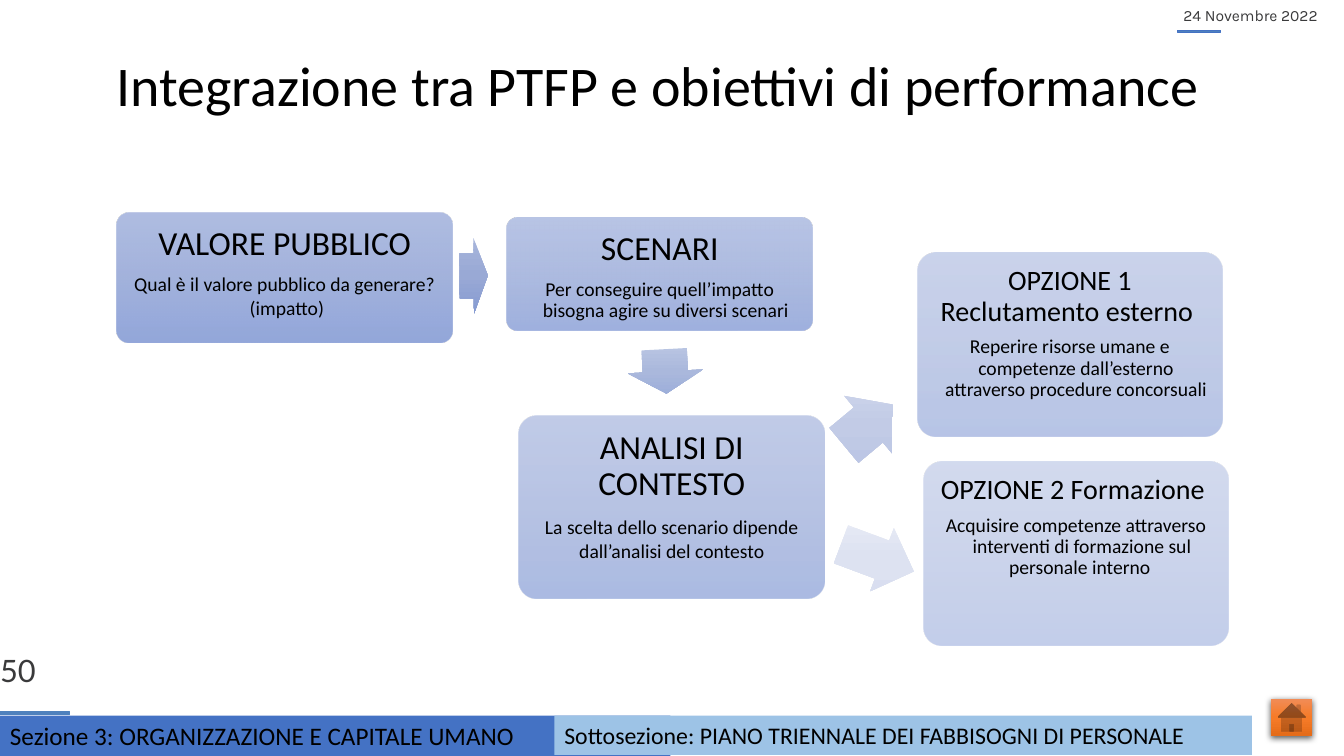
from lxml.etree import SubElement
from pptx import Presentation
from pptx.dml.color import RGBColor
from pptx.enum.shapes import MSO_SHAPE
from pptx.enum.text import MSO_ANCHOR, PP_ALIGN
from pptx.oxml.ns import qn
from pptx.util import Pt

COLORS = {
    "black": "000000", "grey": "3A3A3B", "section": "4472C4",
    "subsection": "9DC3E6", "rule": "4F81BD",
}
CARD_GRADIENT = ("A8B7DF", "9AABD9", "889ED7")
HOME_GRADIENT = ("F18C57", "F67B28", "E56C19")

TITLE = "Integrazione tra PTFP e obiettivi di performance"

# Cards: position, opacity, heading, heading size, body lines, body hangs
CARDS = [
    ((83.5, 151.9, 239.8, 92.9), 90, "VALORE PUBBLICO", 24,
     ["Qual è il valore pubblico da generare?", " (impatto)"], True),
    ((362.2, 155.5, 218.2, 80.6), 80, "SCENARI", 24,
     ["Per conseguire quell’impatto bisogna agire su diversi scenari"], True),
    ((370.8, 296.6, 218.2, 131), 70, "ANALISI DI CONTESTO", 24,
     ["La scelta dello scenario dipende dall’analisi del contesto"], False),
    ((655.2, 180.7, 218.2, 131), 60, "OPZIONE 1 Reclutamento esterno ", 20,
     ["Reperire risorse umane e competenze dall’esterno attraverso "
      "procedure concorsuali"], True),
    ((659.5, 329.8, 218.2, 131), 50, "OPZIONE 2 Formazione ", 20,
     ["Acquisire competenze attraverso interventi di formazione sul "
      "personale interno "], True),
]

# Arrows: position, rotation, gradient
ARROWS = [
    ((328.3, 169.9, 20.2, 54), 359.5, ("A7B5DB", "99A9D5", "869BD2")),
    ((459.4, 238.3, 31.7, 54), 87, ("B8C4E2", "AAB8DC", "9CAEDA")),
    ((597.6, 276.5, 45.4, 54), 320.2, ("CFD6EB", "C2CBE6", "B9C4E4")),
    ((599, 374.4, 55.4, 48.2), 20.5, ("E9ECF6", "DDE2F1", "D9DEF0")),
]

# Footer bars: position, colour, text, size
BARS = [
    ((0, 511.2, 478.8, 28.8), "section",
     "Sezione 3: ORGANIZZAZIONE E CAPITALE UMANO", 18),
    ((396, 511.2, 498.2, 28.1), "subsection",
     "Sottosezione: PIANO TRIENNALE DEI FABBISOGNI DI PERSONALE", 17),
]

# Date and page number: position, text, size, font, line spacing
LABELS = [
    ((845.3, 2.2, 114.5, 14.4), "24 Novembre 2022", 11.2, "Karla", 15.6),
    ((0, 468, 35.3, 24.5), "50", 22, "Lato", 24.2),
]
RULES = [
    ((841, 21.6, 31, 1.4), "section"),
    ((0, 508.3, 49.7, 2.2), "rule"),
]
HOME_BUTTON = (907.9, 499, 29.5, 26.6)

BODY_SIZE = 14
HANG = 8.64

deck = Presentation()
deck.slide_width, deck.slide_height = Pt(960), Pt(540)
page = deck.slides.add_slide(deck.slide_layouts[6])


def add_box(kind, place):
    box = page.shapes.add_shape(kind, *map(Pt, place))
    box.shadow.inherit = False
    box.line.fill.background()
    return box


def fill_solid(box, color):
    box.fill.solid()
    box.fill.fore_color.rgb = RGBColor.from_string(COLORS[color])


def fill_gradient(box, colors, opacity=100):
    box.fill.gradient()
    box.fill.gradient_angle = 270
    gradient = box.element.spPr.find(qn("a:gradFill"))
    gradient.set("rotWithShape", "0")
    stops = gradient.find(qn("a:gsLst"))
    for stop in list(stops):
        stops.remove(stop)
    for index, color in enumerate(colors):
        stop = SubElement(stops, qn("a:gs"), pos=str(index * 50000))
        tint = SubElement(stop, qn("a:srgbClr"), val=color)
        if opacity < 100:
            SubElement(tint, qn("a:alpha"), val=str(opacity * 1000))


def set_frame(box, across=7.2, down=3.6, anchor=MSO_ANCHOR.TOP):
    frame = box.text_frame
    frame.word_wrap = True
    frame.vertical_anchor = anchor
    frame.margin_left = frame.margin_right = Pt(across)
    frame.margin_top = frame.margin_bottom = Pt(down)
    return frame


def write(para, text, size, font="Calibri", color="black",
          align=PP_ALIGN.LEFT, spacing=None):
    para.alignment = align
    para.line_spacing = spacing
    span = para.add_run()
    span.text = text
    span.font.size = Pt(size)
    span.font.name = font
    span.font.color.rgb = RGBColor.from_string(COLORS[color])


# Cards, each with a heading and body lines
for place, opacity, heading, size, lines, hangs in CARDS:
    card = add_box(MSO_SHAPE.ROUNDED_RECTANGLE, place)
    card.adjustments[0] = 0.1
    fill_gradient(card, CARD_GRADIENT, opacity)
    frame = set_frame(card, size * 0.3, size * 0.3)
    para = frame.paragraphs[0]
    write(para, heading, size, align=PP_ALIGN.CENTER, spacing=0.9)
    para.space_after = Pt(size * 0.35)
    for line in lines:
        para = frame.add_paragraph()
        write(para, line, BODY_SIZE, align=PP_ALIGN.CENTER,
              spacing=0.9 if hangs else None)
        if hangs:
            para.level = 1
            para.space_after = Pt(BODY_SIZE * 0.15)
            settings = para._p.get_or_add_pPr()
            settings.set("marL", str(Pt(HANG)))
            settings.set("indent", str(-Pt(HANG)))

# Arrows between the cards
for place, rotation, colors in ARROWS:
    arrow = add_box(MSO_SHAPE.RIGHT_ARROW, place)
    arrow.adjustments[0], arrow.adjustments[1] = 0.6, 0.5
    arrow.rotation = rotation
    fill_gradient(arrow, colors)

# Title
title = page.shapes.add_textbox(Pt(76.3), Pt(10.8), Pt(828), Pt(104.4))
write(set_frame(title, anchor=MSO_ANCHOR.MIDDLE).paragraphs[0], TITLE, 40,
      spacing=0.9)

# Footer bars
for place, color, text, size in BARS:
    bar = add_box(MSO_SHAPE.RECTANGLE, place)
    fill_solid(bar, color)
    write(set_frame(bar).paragraphs[0], text, size)

# Home button with a soft shadow
home = add_box(MSO_SHAPE.ACTION_BUTTON_HOME, HOME_BUTTON)
fill_gradient(home, HOME_GRADIENT)
effects = home.element.spPr.find(qn("a:effectLst"))
shadow = SubElement(effects, qn("a:outerShdw"), blurRad=str(Pt(4.5)),
                    dist=str(Pt(1.5)), dir="5400000", rotWithShape="0")
shade = SubElement(shadow, qn("a:srgbClr"), val=COLORS["black"])
SubElement(shade, qn("a:alpha"), val="63000")

# Date and page number with their rules
for place, color in RULES:
    rule = add_box(MSO_SHAPE.RECTANGLE, place)
    fill_solid(rule, "rule")
    rule.line.color.rgb = RGBColor.from_string(COLORS[color])
    rule.line.width = Pt(0.75)
for place, text, size, font, spacing in LABELS:
    label = page.shapes.add_textbox(*map(Pt, place))
    write(set_frame(label, 0, 0).paragraphs[0], text, size, font, "grey",
          spacing=Pt(spacing))

deck.save("out.pptx")
